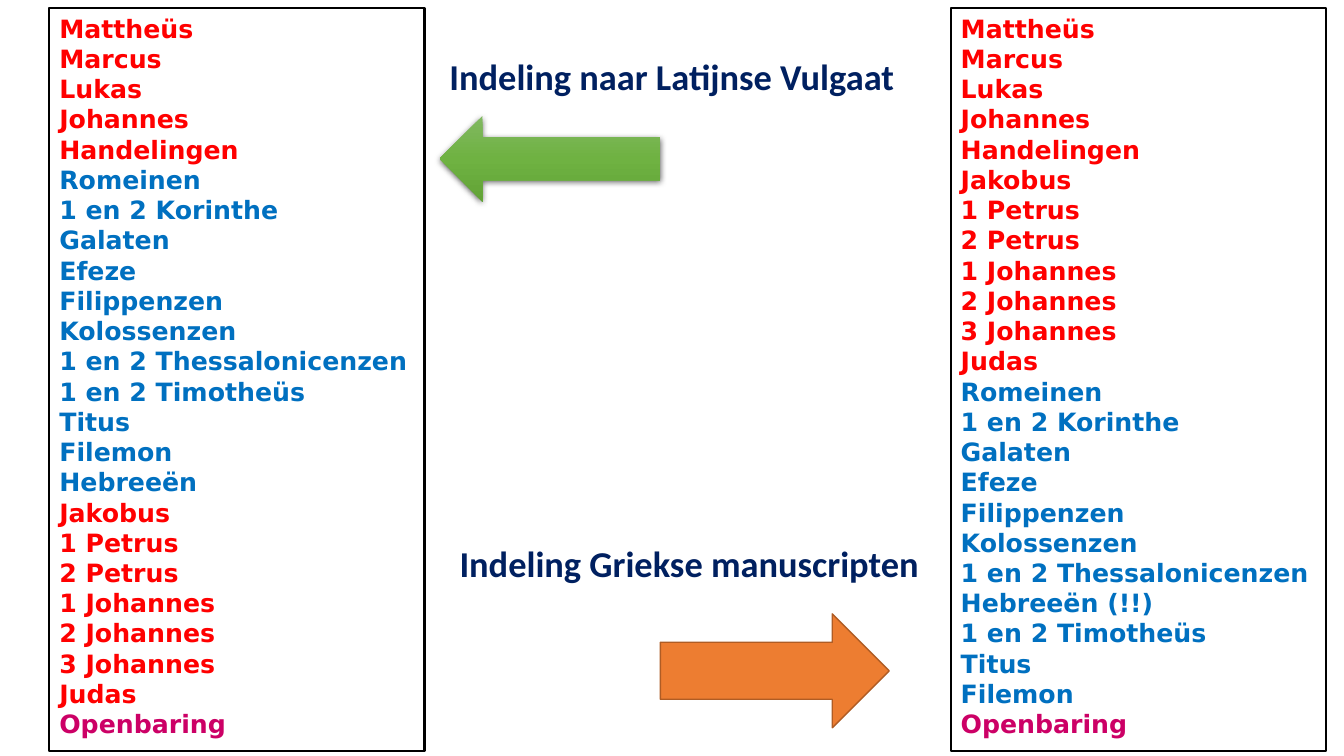
import pptx
import pptx.dml.color
import pptx.enum.shapes
import pptx.enum.text
import pptx.oxml
import pptx.oxml.ns
import pptx.util
from pptx.util import Inches

COLORS = {
    "red": "FF0000", "blue": "0070C0", "magenta": "CC0066", "navy": "002060",
    "black": "000000", "orange": "ED7D31", "brown": "AF5C24",
    "light green": "81B861", "green": "6FB242", "dark green": "62A336",
}
SHAPES = pptx.enum.shapes.MSO_SHAPE

gospels = ["Mattheüs", "Marcus", "Lukas", "Johannes", "Handelingen"]
general_letters = ["Jakobus", "1 Petrus", "2 Petrus", "1 Johannes",
                   "2 Johannes", "3 Johannes", "Judas"]
church_letters = ["Romeinen", "1 en 2 Korinthe", "Galaten", "Efeze", "Filippenzen",
                  "Kolossenzen", "1 en 2 Thessalonicenzen"]
personal_letters = ["1 en 2 Timotheüs", "Titus", "Filemon"]

# Left edge of each list, then its books in coloured groups
book_lists = [
    (0.49, [("red", gospels),
            ("blue", church_letters + personal_letters + ["Hebreeën"]),
            ("red", general_letters),
            ("magenta", ["Openbaring"])]),
    (9.43, [("red", gospels + general_letters),
            ("blue", church_letters + ["Hebreeën (!!)"] + personal_letters),
            ("magenta", ["Openbaring"])]),
]
headings = [
    (4.36, 0.49, "Indeling naar Latijnse Vulgaat"),
    (4.46, 5.32, "Indeling Griekse manuscripten"),
]


def rgb(name):
    return pptx.dml.color.RGBColor.from_string(COLORS[name])


def add_span(para, text, color, **font_format):
    span = para.add_run()
    span.text = text
    span.font.color.rgb = rgb(color)
    for attribute, value in font_format.items():
        setattr(span.font, attribute, value)


deck = pptx.Presentation()
deck.slide_width = Inches(13.33)
deck.slide_height = Inches(7.5)
page = deck.slides.add_slide(deck.slide_layouts[6])

list_font = {"name": "DejaVu Sans", "size": pptx.util.Pt(18), "bold": True}
list_para = {"alignment": pptx.enum.text.PP_ALIGN.LEFT,
             "line_spacing": pptx.util.Pt(21.6)}
for left, groups in book_lists:
    box = page.shapes.add_shape(SHAPES.RECTANGLE, Inches(left), Inches(0.08),
                                Inches(3.72), Inches(7.37))
    box.shadow.inherit = False
    box.fill.background()
    box.line.color.rgb = rgb("black")
    box.line.width = pptx.util.Pt(1.5)
    frame = box.text_frame
    frame.word_wrap = True
    frame.vertical_anchor = pptx.enum.text.MSO_ANCHOR.TOP
    books = [(book, color) for color, names in groups for book in names]
    for index, (book, color) in enumerate(books):
        para = frame.add_paragraph() if index else frame.paragraphs[0]
        for attribute, value in list_para.items():
            setattr(para, attribute, value)
        add_span(para, book, color, **list_font)

heading_font = {"name": "Calibri", "size": pptx.util.Pt(26), "bold": True}
for left, top, text in headings:
    box = page.shapes.add_textbox(Inches(left), Inches(top), Inches(5.07), Inches(0.54))
    box.text_frame.word_wrap = True
    add_span(box.text_frame.paragraphs[0], text, "navy", **heading_font)

vulgate_arrow = page.shapes.add_shape(SHAPES.LEFT_ARROW, Inches(4.36), Inches(1.15),
                                      Inches(2.19), Inches(0.85))
vulgate_arrow.line.fill.background()
vulgate_arrow.fill.gradient()
vulgate_arrow.fill.gradient_angle = 270
namespace = pptx.oxml.ns.nsdecls("a")
properties = vulgate_arrow.element.spPr
stops = properties.find(".//" + pptx.oxml.ns.qn("a:gsLst"))
for stop in list(stops):
    stops.remove(stop)
for percent, color in [(0, "light green"), (50, "green"), (100, "dark green")]:
    stops.append(pptx.oxml.parse_xml(
        f'<a:gs {namespace} pos="{percent * 1000}"><a:srgbClr val="{COLORS[color]}"/></a:gs>'))
vulgate_arrow.shadow.inherit = False
properties.find(pptx.oxml.ns.qn("a:effectLst")).append(pptx.oxml.parse_xml(
    f'<a:outerShdw {namespace} blurRad="{pptx.util.Pt(4.5)}" dist="{pptx.util.Pt(1.5)}" '
    f'dir="5400000" algn="ctr" rotWithShape="0"><a:srgbClr val="{COLORS["black"]}">'
    '<a:alpha val="63000"/></a:srgbClr></a:outerShdw>'))

greek_arrow = page.shapes.add_shape(SHAPES.RIGHT_ARROW, Inches(6.55), Inches(6.09),
                                    Inches(2.27), Inches(1.13))
greek_arrow.shadow.inherit = False
greek_arrow.fill.solid()
greek_arrow.fill.fore_color.rgb = rgb("orange")
greek_arrow.line.color.rgb = rgb("brown")
greek_arrow.line.width = pptx.util.Pt(1)

deck.save("out.pptx")
